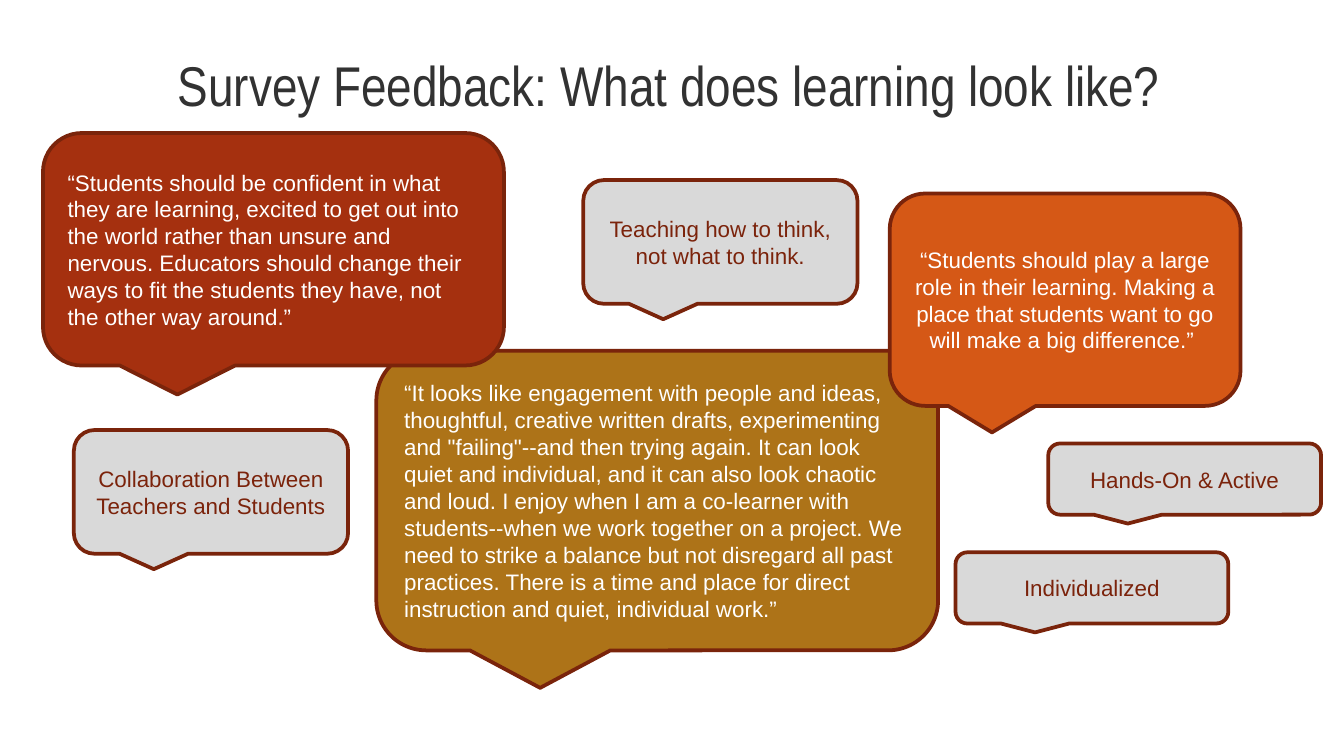
"""Build the survey feedback slide with its speech bubbles."""
import pptx
import pptx.dml.color
import pptx.enum.shapes
import pptx.enum.text
import pptx.util

Inches = pptx.util.Inches
Align = pptx.enum.text.PP_ALIGN
Anchor = pptx.enum.text.MSO_ANCHOR

WHITE, RUST, GREY = "FFFFFF", "7B230B", "D9D9D9"


def color(value):
    return pptx.dml.color.RGBColor.from_string(value)


class FeedbackSlide:
    def __init__(self, deck):
        self.page = deck.slides.add_slide(deck.slide_layouts[5])
        self.outline = "7A240B"

    def style(self, para, font, size, ink, align):
        para.alignment = align
        para.font.name = font
        para.font.size = pptx.util.Pt(size)
        para.font.color.rgb = color(ink)

    def title(self, text, left, top, width, height):
        box = self.page.shapes.title
        box.left, box.top = Inches(left), Inches(top)
        box.width, box.height = Inches(width), Inches(height)
        frame = box.text_frame
        frame.text = text
        frame.auto_size = pptx.enum.text.MSO_AUTO_SIZE.NONE
        frame.vertical_anchor = Anchor.BOTTOM
        frame.margin_left = frame.margin_right = Inches(0.1)
        frame.margin_top = frame.margin_bottom = Inches(0.1)
        self.style(frame.paragraphs[0], "Arial Narrow", 30, "323232", Align.CENTER)

    def bubble(self, text, left, top, width, height, fill=GREY, ink=RUST, align=Align.CENTER):
        box = self.page.shapes.add_shape(
            pptx.enum.shapes.MSO_SHAPE.ROUNDED_RECTANGULAR_CALLOUT,
            Inches(left), Inches(top), Inches(width), Inches(height))
        box.shadow.inherit = False
        box.fill.solid()
        box.fill.fore_color.rgb = color(fill)
        box.line.color.rgb = color(self.outline)
        box.line.width = pptx.util.Pt(2)
        frame = box.text_frame
        frame.text = text
        frame.word_wrap = True
        frame.vertical_anchor = Anchor.MIDDLE
        self.style(frame.paragraphs[0], "Arial", 12, ink, align)


def main():
    deck = pptx.Presentation()
    deck.slide_width = Inches(10)
    deck.slide_height = deck.slide_width * 9 // 16
    slide = FeedbackSlide(deck)
    slide.title("Survey Feedback: What does learning look like?", 0, 0.22, 9.96, 0.76)

    slide.bubble(
        "“It looks like engagement with people and ideas, thoughtful, creative written "
        "drafts, experimenting and \"failing\"--and then trying again. It can look quiet "
        "and individual, and it can also look chaotic and loud. I enjoy when I am a "
        "co-learner with students--when we work together on a project. We need to strike "
        "a balance but not disregard all past practices. There is a time and place for "
        "direct instruction and quiet, individual work.”",
        2.8, 2.61, 4.18, 2.23, "AD7318", WHITE, Align.LEFT)
    slide.bubble(
        "“Students should be confident in what they are learning, excited to get out into "
        "the world rather than unsure and nervous. Educators should change their ways to "
        "fit the students they have, not the other way around.”",
        0.32, 0.99, 3.43, 1.73, "A5300F", WHITE, Align.LEFT)

    themes = [
        ("Collaboration Between Teachers and Students", 0.55, 3.2, 2.04, 0.92),
        ("Teaching how to think, not what to think.", 4.34, 1.34, 2.04, 0.92),
        ("Hands-On & Active", 7.8, 3.3, 2.03, 0.53),
        ("Individualized", 7.11, 4.11, 2.03, 0.53),
    ]
    for theme in themes:
        slide.bubble(*theme)

    slide.bubble(
        "“Students should play a large role in their learning. Making a place that "
        "students want to go will make a big difference.” ",
        6.62, 1.44, 2.61, 1.58, "D55816", WHITE)
    deck.save("out.pptx")


if __name__ == "__main__":
    main()
